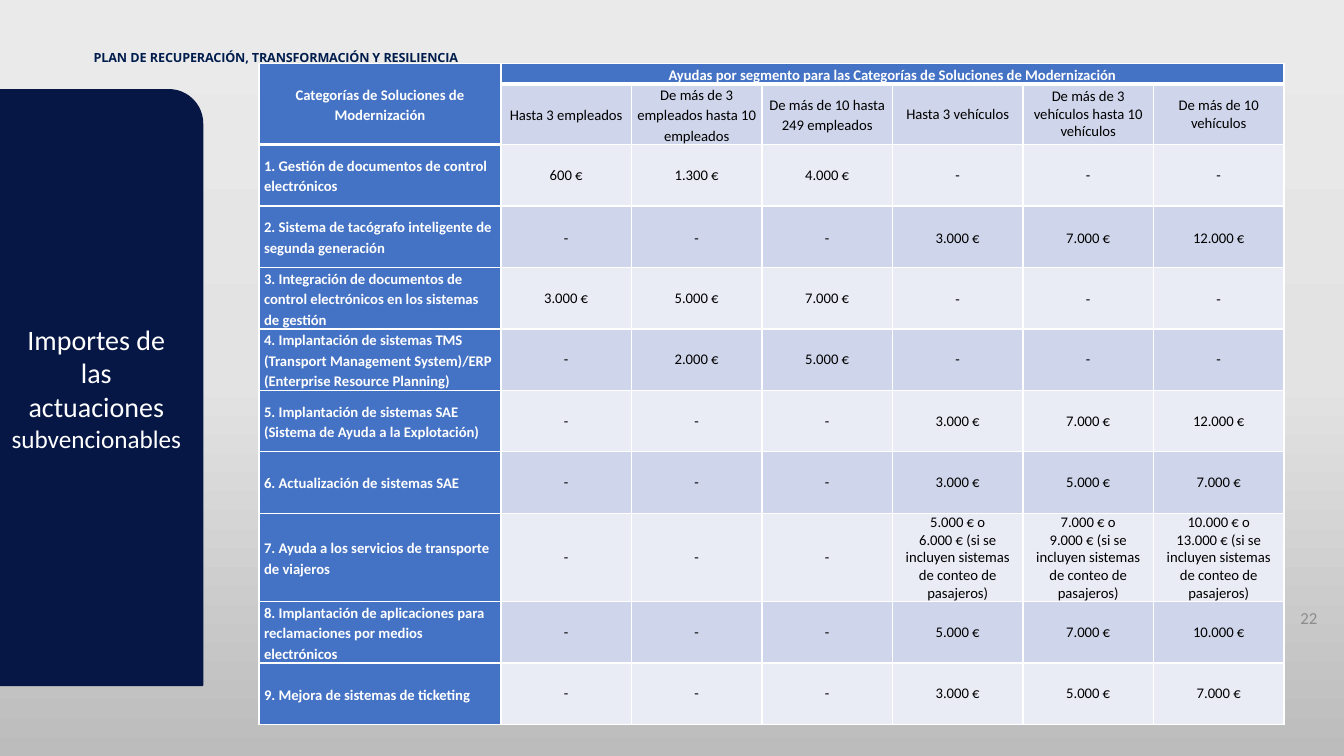
from copy import deepcopy
from dataclasses import dataclass
from typing import Any

from lxml.etree import SubElement
from pptx import Presentation
from pptx.dml.color import RGBColor
from pptx.enum.shapes import MSO_SHAPE as Shape
from pptx.enum.text import MSO_ANCHOR as Anchor, PP_ALIGN as Align
from pptx.oxml.ns import qn
from pptx.util import Emu, Pt

EMU_PER_PX = 4572
NAVY, BLUE, WHITE, BLACK = "061745", "4472C4", "FFFFFF", "000000"
BANDS = ("E9EBF5", "CFD5EA")
BACKGROUND_STOPS = ((0, "EBEAEA"), (0.5, "E4E3E3"), (1, "BDBCBC"))
LOOSE = 1.15
CELL_INSETS = {"margin_left": 10, "margin_right": 10, "margin_top": 0, "margin_bottom": 0}
LABEL_FONT = {"name": "Calibri", "size": Pt(10.5), "bold": True}
VALUE_FONT = LABEL_FONT | {"bold": False}


@dataclass
class Category:
    label: str
    employees: tuple[str, ...] = ("-",) * 3
    vehicles: tuple[str, ...] = ("-",) * 3
    employee_spacing: float = 1.0
    vehicle_spacing: float = 1.0


@dataclass
class Piece:
    text: str
    size: float = 9
    tracking: int = 0


COUNTING = "(si se incluyen sistemas de conteo de pasajeros)"
SEGMENTS = Category(
    "Categorías de Soluciones de Modernización",
    ("Hasta 3 empleados", "De más de 3 empleados hasta 10 empleados",
     "De más de 10 hasta 249 empleados"),
    ("Hasta 3 vehículos", "De más de 3 vehículos hasta 10 vehículos",
     "De más de 10 vehículos"),
    employee_spacing=LOOSE,
)
CATEGORIES = [
    Category("1. Gestión de documentos de control electrónicos",
             employees=("600 €", "1.300 €", "4.000 €")),
    Category("2. Sistema de tacógrafo inteligente de segunda generación",
             vehicles=("3.000 €", "7.000 €", "12.000 €"),
             employee_spacing=LOOSE, vehicle_spacing=LOOSE),
    Category("3. Integración de documentos de control electrónicos en los sistemas de gestión",
             employees=("3.000 €", "5.000 €", "7.000 €"), vehicle_spacing=LOOSE),
    Category("4. Implantación de sistemas TMS (Transport Management System)/ERP "
             "(Enterprise Resource Planning)",
             employees=("-", "2.000 €", "5.000 €")),
    Category("5. Implantación de sistemas SAE (Sistema de Ayuda a la Explotación)",
             vehicles=("3.000 €", "7.000 €", "12.000 €")),
    Category("6. Actualización de sistemas SAE",
             vehicles=("3.000 €", "5.000 €", "7.000 €")),
    Category("7. Ayuda a los servicios de transporte de viajeros",
             vehicles=(f"5.000 € o\n6.000 € {COUNTING}",
                       f"7.000 € o\n9.000 € {COUNTING}",
                       f"10.000 € o\n13.000 € {COUNTING}")),
    Category("8. Implantación de aplicaciones para reclamaciones por medios electrónicos",
             vehicles=("5.000 €", "7.000 €", "10.000 €")),
    Category("9. Mejora de sistemas de ticketing",
             vehicles=("3.000 €", "5.000 €", "7.000 €")),
]
PLAN_NAME = [
    Piece("PLAN ", tracking=-10), Piece("DE "),
    Piece("RECUPERACIÓN, TRANSFORMACIÓN ", tracking=-10),
    Piece("Y "), Piece("RESILIENCIA", tracking=-10),
]


def px(length: int) -> Emu:
    return Emu(length * EMU_PER_PX)


def rgb(color: str) -> RGBColor:
    return RGBColor.from_string(color)


def set_all(target: Any, values: dict) -> None:
    for name, value in values.items():
        setattr(target, name, value)


def set_insets(target: Any, insets: dict[str, int]) -> None:
    set_all(target, {side: px(length) for side, length in insets.items()})


def add_pieces(paragraph: Any, pieces: list[Piece], color: str, font: dict) -> None:
    for piece in pieces:
        run = paragraph.add_run()
        run.text = piece.text
        set_all(run.font, font | {"size": Pt(piece.size)})
        run.font.color.rgb = rgb(color)
        if piece.tracking:
            run.font._element.set("spc", str(piece.tracking))


def paint_background(slide: Any) -> None:
    fill = slide.background.fill
    fill.gradient()
    fill.gradient_angle = 270
    stop_list = next(slide._element.iter(qn("a:gsLst")))
    stop_list.insert(1, deepcopy(stop_list[0]))
    for stop, (position, color) in zip(fill.gradient_stops, BACKGROUND_STOPS):
        stop.position = position
        stop.color.rgb = rgb(color)


def add_text_box(slide: Any, place: tuple[int, ...], pieces: list[Piece], color: str,
                 font: dict, insets: dict[str, int], align: Align, anchor: Anchor) -> None:
    frame = slide.shapes.add_textbox(*map(px, place)).text_frame
    set_all(frame, {"word_wrap": True, "vertical_anchor": anchor})
    set_insets(frame, insets)
    frame.paragraphs[0].alignment = align
    add_pieces(frame.paragraphs[0], pieces, color, font)


def add_title_panel(slide: Any) -> None:
    panel = slide.shapes.add_shape(Shape.ROUND_1_RECTANGLE, *map(px, (0, 178, 402, 1182)))
    panel.shadow.inherit = False
    panel.fill.solid()
    panel.fill.fore_color.rgb = panel.line.color.rgb = rgb(NAVY)
    panel.line.width = Pt(1)
    frame = panel.text_frame
    set_all(frame, {"word_wrap": True, "vertical_anchor": Anchor.MIDDLE})
    lines = ([Piece("Importes de las", 20)],
             [Piece("actuaciones ", 20), Piece("subvencionables", 18)])
    for paragraph, pieces in zip((frame.paragraphs[0], frame.add_paragraph()), lines):
        paragraph.alignment = Align.CENTER
        add_pieces(paragraph, pieces, WHITE, {"name": "Calibri"})


def add_borders(cell: Any, bottom: float) -> None:
    properties = cell._tc.get_or_add_tcPr()
    for side, width in {"L": 1, "R": 1, "T": 1, "B": bottom}.items():
        border = SubElement(properties, qn(f"a:ln{side}"), w=str(Pt(width)))
        solid = SubElement(border, qn("a:solidFill"))
        SubElement(solid, qn("a:srgbClr"), val=WHITE)


def fill_cell(cell: Any, text: str, fill: str, color: str, font: dict,
              align: Align, spacing: float) -> None:
    cell.fill.solid()
    cell.fill.fore_color.rgb = rgb(fill)
    cell.vertical_anchor = Anchor.MIDDLE
    set_insets(cell, CELL_INSETS)
    cell.text = text
    for paragraph in cell.text_frame.paragraphs:
        set_all(paragraph, {"alignment": align, "line_spacing": spacing})
        for run in paragraph.runs:
            set_all(run.font, font)
            run.font.color.rgb = rgb(color)


def add_grants_table(slide: Any) -> None:
    widths = [480] + [259] * 6
    heights = [30, 92] + [122] * len(CATEGORIES)
    place = (514, 126, sum(widths), sum(heights))
    table = slide.shapes.add_table(len(heights), len(widths), *map(px, place)).table
    set_all(table, {"first_row": False, "horz_banding": False})
    for column, width in zip(table.columns, widths):
        column.width = px(width)
    for row, height in zip(table.rows, heights):
        row.height = px(height)
    for index, row in enumerate(table.rows):
        for cell in row.cells:
            add_borders(cell, bottom=3 if index == 0 else 1)

    table.cell(0, 0).merge(table.cell(1, 0))
    table.cell(0, 1).merge(table.cell(0, 6))
    fill_cell(table.cell(0, 1), "Ayudas por segmento para las Categorías de Soluciones de Modernización",
              BLUE, WHITE, LABEL_FONT, Align.CENTER, LOOSE)
    for index, category in enumerate([SEGMENTS] + CATEGORIES, start=1):
        is_header = category is SEGMENTS
        fill_cell(table.cell(0 if is_header else index, 0), category.label, BLUE, WHITE,
                  LABEL_FONT, Align.CENTER if is_header else Align.LEFT, LOOSE)
        spacings = [category.employee_spacing] * 3 + [category.vehicle_spacing] * 3
        amounts = category.employees + category.vehicles
        for column, (amount, spacing) in enumerate(zip(amounts, spacings), start=1):
            fill_cell(table.cell(index, column), amount, BANDS[index % 2], BLACK,
                      VALUE_FONT, Align.CENTER, spacing)


def main() -> None:
    deck = Presentation()
    set_all(deck, {"slide_width": px(2667), "slide_height": px(1500)})
    slide = deck.slides.add_slide(deck.slide_layouts[6])
    paint_background(slide)
    add_text_box(slide, (184, 98, 882, 34), PLAN_NAME, "001D4D",
                 {"name": "Open Sans", "bold": True}, CELL_INSETS | {
                     "margin_left": 2, "margin_right": 0, "margin_top": 2},
                 Align.LEFT, Anchor.TOP)
    add_text_box(slide, (2034, 1186, 600, 80), [Piece("22", 12)], "8C8C8C",
                 {"name": "Calibri"}, {"margin_left": 20, "margin_right": 20},
                 Align.RIGHT, Anchor.MIDDLE)
    add_title_panel(slide)
    add_grants_table(slide)
    deck.save("out.pptx")


if __name__ == "__main__":
    main()
